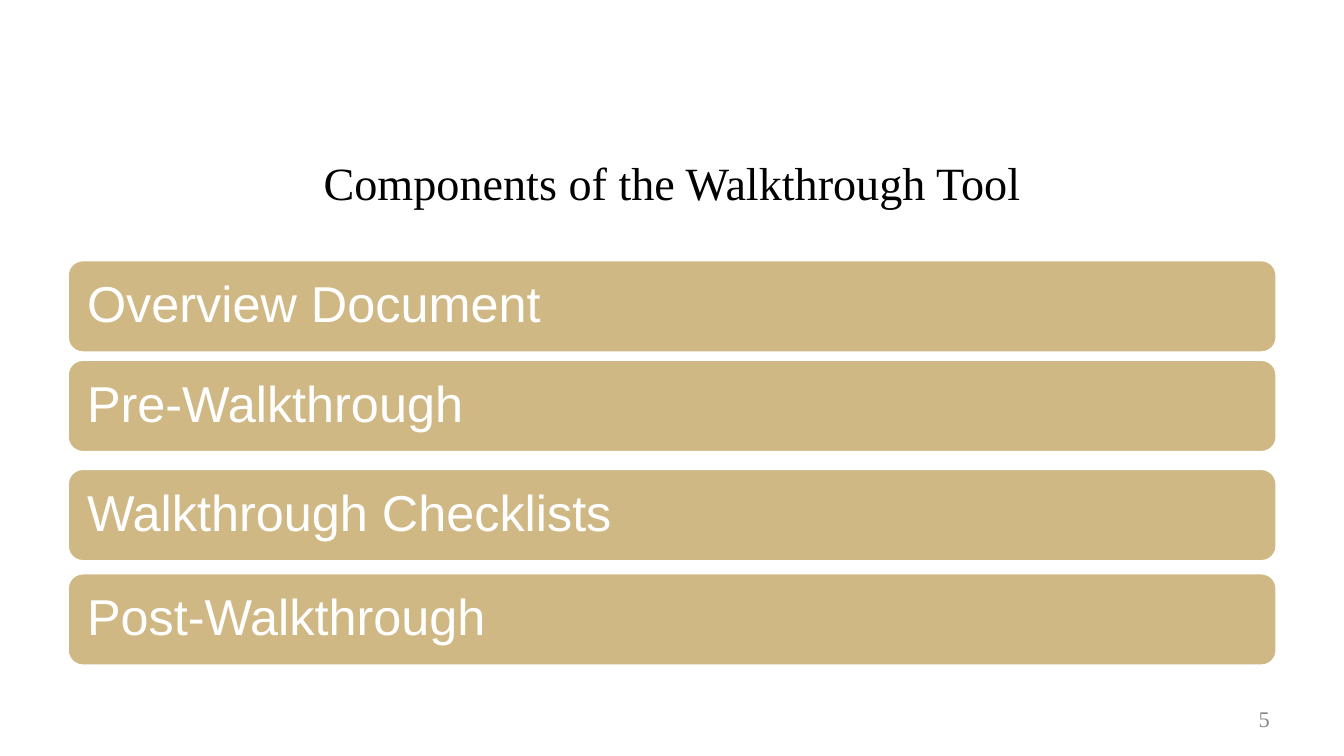
from pptx import Presentation
from pptx.dml.color import RGBColor
from pptx.enum.shapes import MSO_SHAPE
from pptx.enum.text import MSO_ANCHOR, PP_ALIGN
from pptx.util import Cm, Pt

ROUND = MSO_SHAPE.ROUNDED_RECTANGLE
MIDDLE = MSO_ANCHOR.MIDDLE
LEFT, CENTER, RIGHT = PP_ALIGN.LEFT, PP_ALIGN.CENTER, PP_ALIGN.RIGHT
SERIF, SANS = "Times New Roman", "Arial"
EDGE, WIDTH = Cm(1.7), Cm(30.48)


def color(code):
    return RGBColor.from_string(code)


def write(shape, text, size, font=SERIF, ink="000000", align=LEFT, pad=(0.18, 0.1), line=0.9):
    frame = shape.text_frame
    frame.word_wrap = True
    frame.vertical_anchor = MIDDLE
    frame.margin_left = frame.margin_right = Cm(pad[0])
    frame.margin_top = frame.margin_bottom = Cm(pad[1])
    frame.text = text
    para = frame.paragraphs[0]
    para.alignment = align
    para.line_spacing = line
    para.font.name = font
    para.font.size = Pt(size)
    para.font.color.rgb = color(ink)


deck = Presentation()
deck.slide_width, deck.slide_height = Cm(33.87), Cm(19.05)
slide = deck.slides.add_slide(deck.slide_layouts[5])

# Title
title = slide.shapes.title
title.left, title.top, title.width, title.height = EDGE, Cm(3.23), WIDTH, Cm(2.69)
write(title, "Components of the Walkthrough Tool", 33, align=CENTER, line=1.0)

# Page number
page = slide.shapes.add_textbox(Cm(24.28), Cm(17.65), Cm(7.9), Cm(1.02))
write(page, "5", 16, ink="888888", align=RIGHT)

# Component bars
parts = [
    ("Overview Document", 6.55),
    ("Pre-Walkthrough\u00a0".strip(), 9.06),
    ("Walkthrough Checklists", 11.81),
    ("Post-Walkthrough", 14.44),
]
for name, top in parts:
    bar = slide.shapes.add_shape(ROUND, EDGE, Cm(top), WIDTH, Cm(2.34))
    bar.shadow.inherit = False
    bar.fill.solid()
    bar.fill.fore_color.rgb = color("D0B884")
    bar.line.color.rgb = color("FFFFFF")
    bar.line.width = Pt(2)
    write(bar, name, 36, font=SANS, ink="FFFFFF", pad=(0.38, 0.38))

deck.save("out.pptx")
